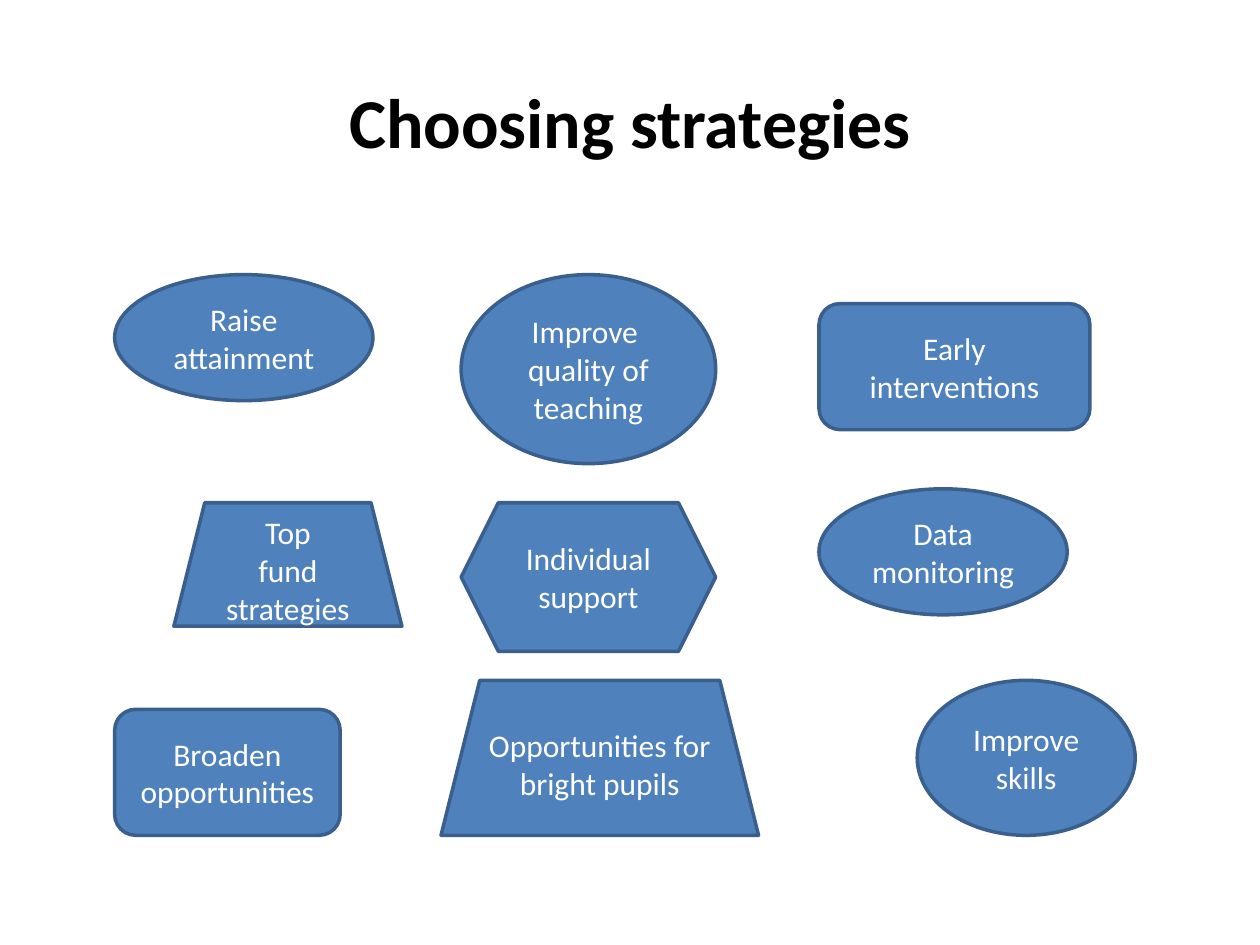
"""Build the "Choosing strategies" slide of labelled shapes."""
from dataclasses import dataclass

from pptx import Presentation
from pptx.dml.color import RGBColor
from pptx.enum.shapes import MSO_SHAPE
from pptx.enum.text import MSO_ANCHOR, PP_ALIGN
from pptx.slide import Slide
from pptx.text.text import TextFrame
from pptx.util import Inches, Pt

BLACK = RGBColor(0x00, 0x00, 0x00)
WHITE = RGBColor(0xFF, 0xFF, 0xFF)
BLUE = RGBColor(0x4F, 0x81, 0xBD)
DARK_BLUE = RGBColor(0x3A, 0x5F, 0x8C)
FONT = "Calibri"

LEFT, CENTRE, RIGHT = 0.91, 3.66, 6.5
TOP, MIDDLE, BOTTOM = 2.18, 3.99, 6.63
LOW, TALL = 1.0, 1.23


@dataclass(frozen=True)
class Strategy:
    """One strategy and the shape that holds it, in inches."""

    lines: tuple[str, ...]
    outline: MSO_SHAPE
    left: float
    top: float
    width: float
    height: float


STRATEGIES = (
    Strategy(("Raise", "attainment"), MSO_SHAPE.OVAL, LEFT, TOP, 2.05, LOW),
    Strategy(("Improve ", "quality of teaching"), MSO_SHAPE.OVAL, CENTRE, TOP, 2.02, 1.5),
    Strategy(("Early interventions",), MSO_SHAPE.ROUNDED_RECTANGLE, RIGHT, 2.41, 2.15, LOW),
    Strategy(("Broaden opportunities",), MSO_SHAPE.ROUNDED_RECTANGLE, LEFT, BOTTOM - LOW, 1.79, LOW),
    Strategy(("Top", "fund", "strategies"), MSO_SHAPE.TRAPEZOID, 1.38, MIDDLE, 1.81, 0.98),
    Strategy(("Individual support",), MSO_SHAPE.HEXAGON, CENTRE, MIDDLE, 2.02, 1.18),
    Strategy(("Improve skills",), MSO_SHAPE.OVAL, 7.28, BOTTOM - TALL, 1.73, TALL),
    Strategy(("Data monitoring",), MSO_SHAPE.OVAL, RIGHT, 3.88, 1.97, LOW),
    Strategy(("Opportunities for bright pupils",), MSO_SHAPE.TRAPEZOID, 3.5, BOTTOM - TALL, 2.52, TALL),
)


def write_lines(frame: TextFrame, lines: tuple[str, ...], size: int,
                color: RGBColor, bold: bool = False) -> None:
    """Write each line as a centred paragraph."""
    frame.word_wrap = True
    frame.vertical_anchor = MSO_ANCHOR.MIDDLE
    for index, line in enumerate(lines):
        paragraph = frame.add_paragraph() if index else frame.paragraphs[0]
        paragraph.alignment = PP_ALIGN.CENTER
        run = paragraph.add_run()
        run.text = line
        run.font.name = FONT
        run.font.size = Pt(size)
        run.font.bold = bold
        run.font.color.rgb = color


def add_heading(slide: Slide, wording: str) -> None:
    """Place and fill the title placeholder."""
    heading = slide.shapes.title
    heading.left, heading.top = Inches(0.75), Inches(0.6)
    heading.width, heading.height = Inches(8.5), Inches(0.71)
    write_lines(heading.text_frame, (wording,), 40, BLACK, bold=True)


def add_strategy(slide: Slide, strategy: Strategy) -> None:
    """Draw one strategy shape with its label."""
    shape = slide.shapes.add_shape(
        strategy.outline, Inches(strategy.left), Inches(strategy.top),
        Inches(strategy.width), Inches(strategy.height))
    shape.shadow.inherit = False
    shape.fill.solid()
    shape.fill.fore_color.rgb = BLUE
    shape.line.color.rgb = DARK_BLUE
    shape.line.width = Pt(2)
    write_lines(shape.text_frame, strategy.lines, 18, WHITE)


def main() -> None:
    """Build and save the presentation."""
    presentation = Presentation()
    presentation.slide_width, presentation.slide_height = Inches(10), Inches(7.5)
    slide = presentation.slides.add_slide(presentation.slide_layouts.get_by_name("Title Only"))
    add_heading(slide, "Choosing strategies")
    for strategy in STRATEGIES:
        add_strategy(slide, strategy)
    presentation.save("out.pptx")


if __name__ == "__main__":
    main()
